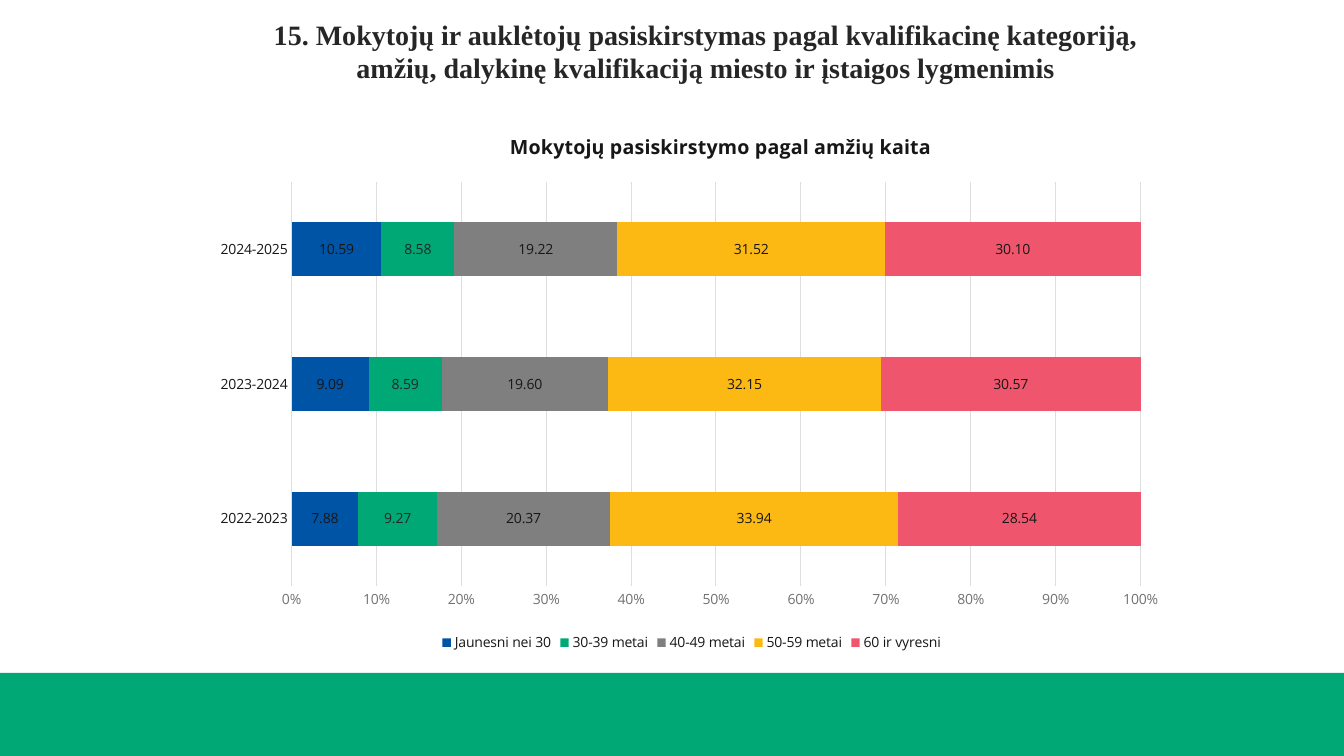
from dataclasses import dataclass

from lxml.etree import SubElement
from pptx import Presentation
from pptx.chart.data import CategoryChartData
from pptx.dml.color import RGBColor
from pptx.enum.chart import XL_CHART_TYPE, XL_LABEL_POSITION, XL_LEGEND_POSITION, XL_TICK_MARK
from pptx.enum.shapes import MSO_SHAPE
from pptx.enum.text import MSO_ANCHOR, MSO_AUTO_SIZE, PP_ALIGN
from pptx.oxml.ns import qn
from pptx.util import Inches, Pt

COLORS = {
    "blue": "0054A5",
    "green": "00A875",
    "gray": "7F7F7F",
    "yellow": "FCB813",
    "coral": "EF566D",
    "ink": "262626",
    "black": "181717",
    "axis": "727272",
    "grid": "DEDEDE",
}
TITLE_FONT = "Times New Roman"
CHART_FONT = "Open Sans"
SLIDE_WIDTH = 13.33
SLIDE_HEIGHT = 7.5
TITLE_LINES = (
    "15. Mokytojų ir auklėtojų pasiskirstymas pagal kvalifikacinę kategoriją,",
    "amžių, dalykinę kvalifikaciją miesto ir įstaigos lygmenimis",
)
CHART_TITLE = "Mokytojų pasiskirstymo pagal amžių kaita"
SCHOOL_YEARS = ("2022-2023", "2023-2024", "2024-2025")


@dataclass(frozen=True)
class Area:
    left: float
    top: float
    width: float
    height: float

    def lengths(self) -> tuple:
        return (
            Inches(self.left * SLIDE_WIDTH),
            Inches(self.top * SLIDE_HEIGHT),
            Inches(self.width * SLIDE_WIDTH),
            Inches(self.height * SLIDE_HEIGHT),
        )


@dataclass(frozen=True)
class AgeGroup:
    name: str
    shares: tuple
    color: str
    label_color: str = "black"


TITLE_AREA = Area(2.51 / SLIDE_WIDTH, 0.12 / SLIDE_HEIGHT, 8.98 / SLIDE_WIDTH, 0.77 / SLIDE_HEIGHT)
CHART_AREA = Area(2.02 / SLIDE_WIDTH, 1.16 / SLIDE_HEIGHT, 9.68 / SLIDE_WIDTH, 5.35 / SLIDE_HEIGHT)
FOOTER_AREA = Area(0, 0.89, 1, 0.11)

AGE_GROUPS = (
    AgeGroup("Jaunesni nei 30", (7.88, 9.09, 10.59), "blue"),
    AgeGroup("30-39 metai", (9.27, 8.59, 8.58), "green", "ink"),
    AgeGroup("40-49 metai", (20.37, 19.6, 19.22), "gray"),
    AgeGroup("50-59 metai", (33.94, 32.15, 31.52), "yellow"),
    AgeGroup("60 ir vyresni", (28.54, 30.57, 30.1), "coral"),
)


def rgb(name: str) -> RGBColor:
    return RGBColor.from_string(COLORS[name])


def style_font(font, color: str, size: float = 10, bold: bool = False, name: str = CHART_FONT) -> None:
    font.name = name
    font.size = Pt(size)
    font.bold = bold
    font.color.rgb = rgb(color)


def style_line(line, color: str) -> None:
    line.color.rgb = rgb(color)
    line.width = Pt(0.75)


def set_layout(parent, **settings) -> None:
    layout = parent.find(qn("c:layout"))
    if layout is None:
        layout = SubElement(parent, qn("c:layout"))
        parent.insert(0, layout)
    manual = SubElement(layout, qn("c:manualLayout"))
    for key, value in settings.items():
        SubElement(manual, qn(f"c:{key}")).set("val", str(value))


def add_footer(page) -> None:
    footer = page.shapes.add_shape(MSO_SHAPE.RECTANGLE, *FOOTER_AREA.lengths())
    footer.shadow.inherit = False
    footer.fill.solid()
    footer.fill.fore_color.rgb = rgb("green")
    footer.line.fill.background()


def fill_title(page) -> None:
    title = page.shapes.title
    title.left, title.top, title.width, title.height = TITLE_AREA.lengths()
    frame = title.text_frame
    frame.text = "\n".join(TITLE_LINES)
    frame.word_wrap = True
    frame.auto_size = MSO_AUTO_SIZE.SHAPE_TO_FIT_TEXT
    frame.vertical_anchor = MSO_ANCHOR.TOP
    for para in frame.paragraphs:
        para.alignment = PP_ALIGN.CENTER
        para.space_before = Pt(0)
        for span in para.runs:
            style_font(span.font, "ink", 20, True, TITLE_FONT)


def style_axes(chart) -> None:
    years = chart.category_axis
    years.major_tick_mark = XL_TICK_MARK.NONE
    style_line(years.format.line, "grid")
    style_font(years.tick_labels.font, "black")
    percent = chart.value_axis
    percent.major_tick_mark = XL_TICK_MARK.NONE
    percent.format.line.fill.background()
    percent.has_major_gridlines = True
    style_line(percent.major_gridlines.format.line, "grid")
    percent.tick_labels.number_format = "0%"
    percent.tick_labels.number_format_is_linked = False
    style_font(percent.tick_labels.font, "axis")


def style_series(series, group: AgeGroup) -> None:
    series.format.fill.solid()
    series.format.fill.fore_color.rgb = rgb(group.color)
    labels = series.data_labels
    labels.show_value = True
    labels.number_format = "0.00"
    labels.number_format_is_linked = False
    labels.position = XL_LABEL_POSITION.CENTER
    style_font(labels.font, group.label_color)


def add_age_chart(page) -> None:
    data = CategoryChartData(number_format="0.00")
    data.categories = SCHOOL_YEARS
    for group in AGE_GROUPS:
        data.add_series(group.name, group.shares)
    chart = page.shapes.add_chart(XL_CHART_TYPE.BAR_STACKED_100, *CHART_AREA.lengths(), data).chart
    style_font(chart.font, "ink")

    chart.has_title = True
    heading = chart.chart_title
    heading.text_frame.text = CHART_TITLE
    style_font(heading.text_frame.paragraphs[0].runs[0].font, "black", 14, True)
    set_layout(heading._element, xMode="edge", yMode="edge", x=0.31, y=0.02)

    chart.has_legend = True
    chart.legend.position = XL_LEGEND_POSITION.BOTTOM
    chart.legend.include_in_layout = False
    style_font(chart.legend.font, "black")

    style_axes(chart)
    plot = chart.plots[0]
    plot.gap_width = 150
    plot.overlap = 100
    plot.vary_by_categories = False
    for series, group in zip(plot.series, AGE_GROUPS):
        style_series(series, group)
    set_layout(
        chart._chartSpace.chart.plotArea,
        layoutTarget="inner", xMode="edge", yMode="edge", x=0.09, y=0.12, w=0.87, h=0.75,
    )


def main() -> None:
    deck = Presentation()
    deck.slide_width = Inches(SLIDE_WIDTH)
    deck.slide_height = Inches(SLIDE_HEIGHT)
    page = deck.slides.add_slide(deck.slide_layouts[5])
    add_footer(page)
    fill_title(page)
    add_age_chart(page)
    deck.save("out.pptx")


if __name__ == "__main__":
    main()
